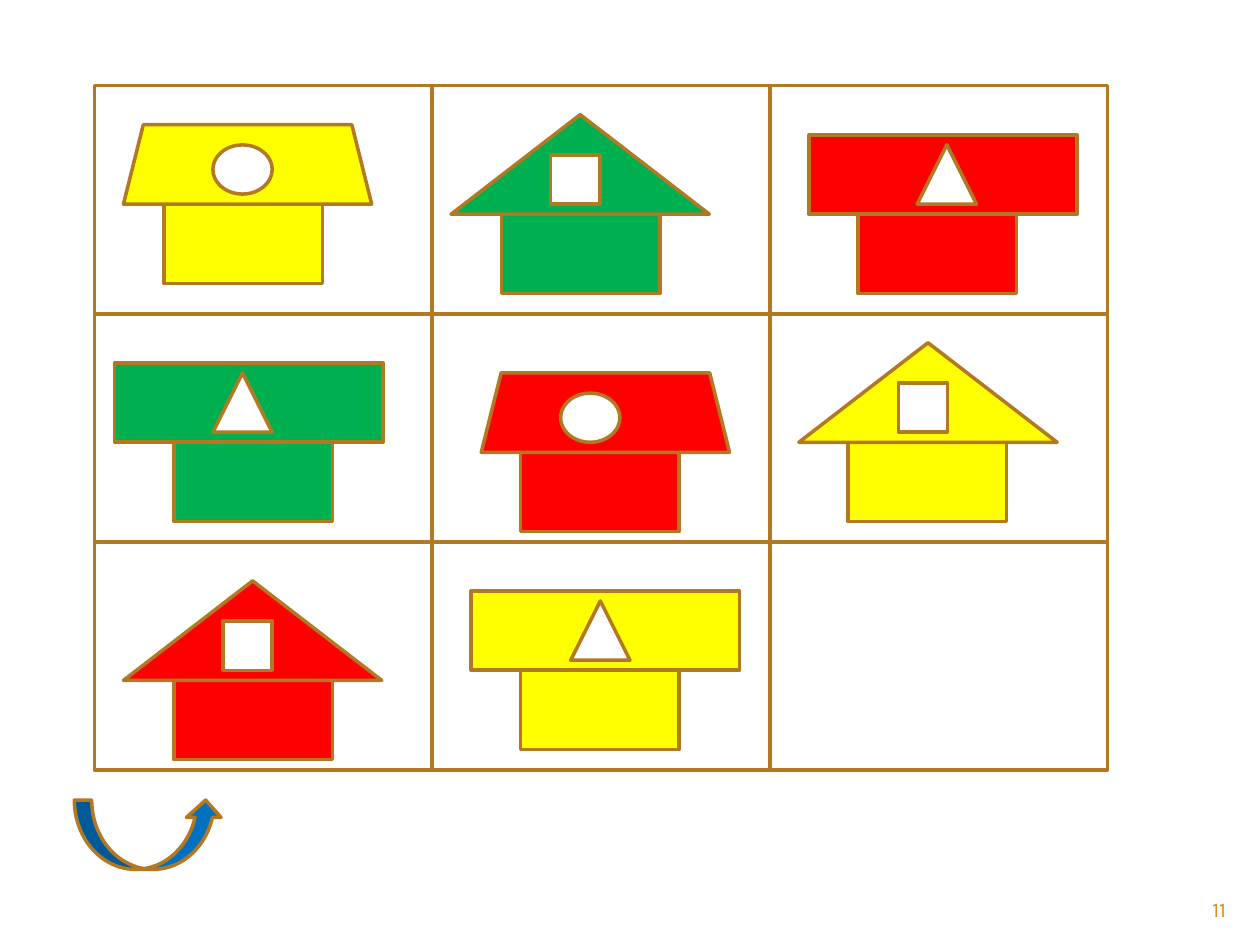
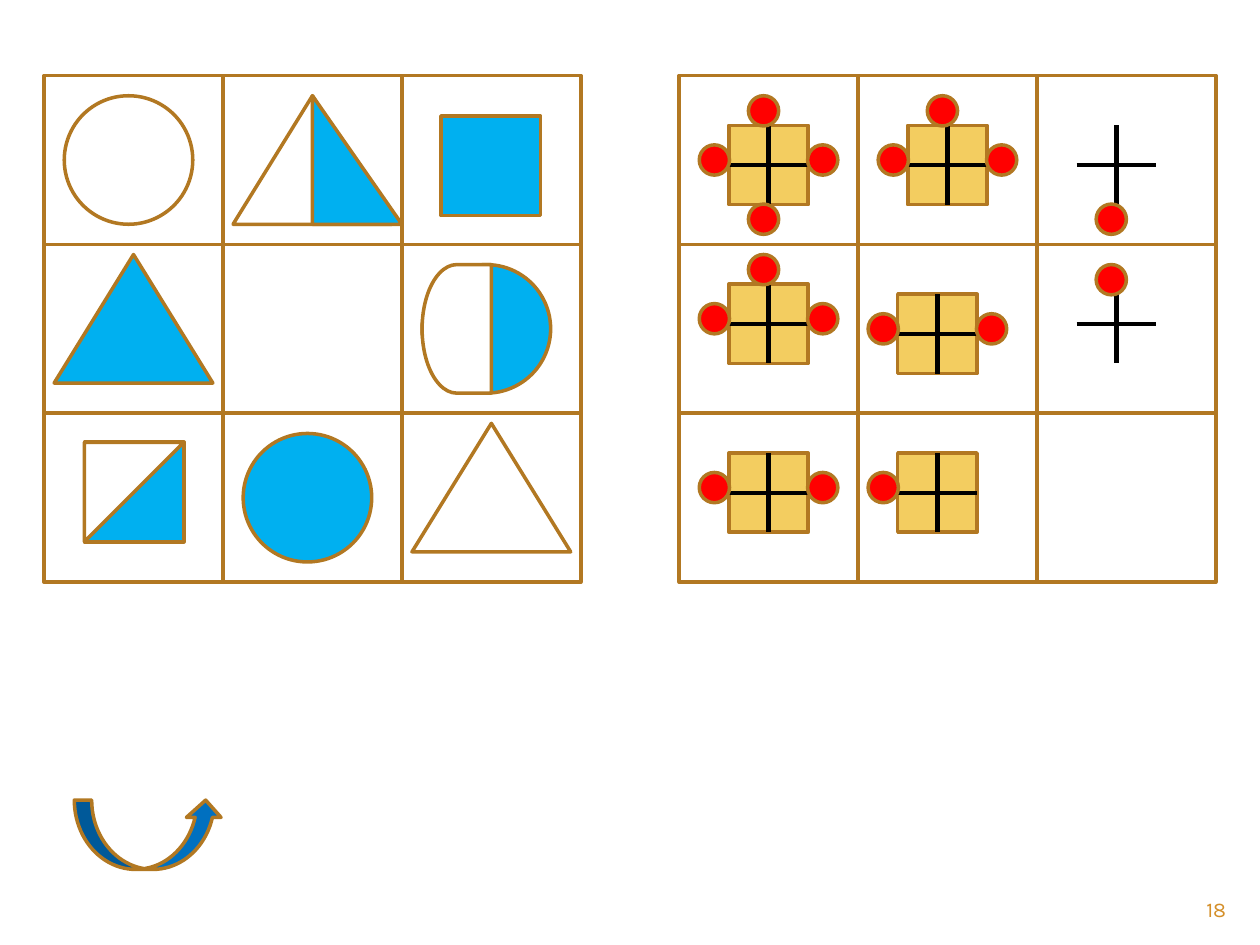
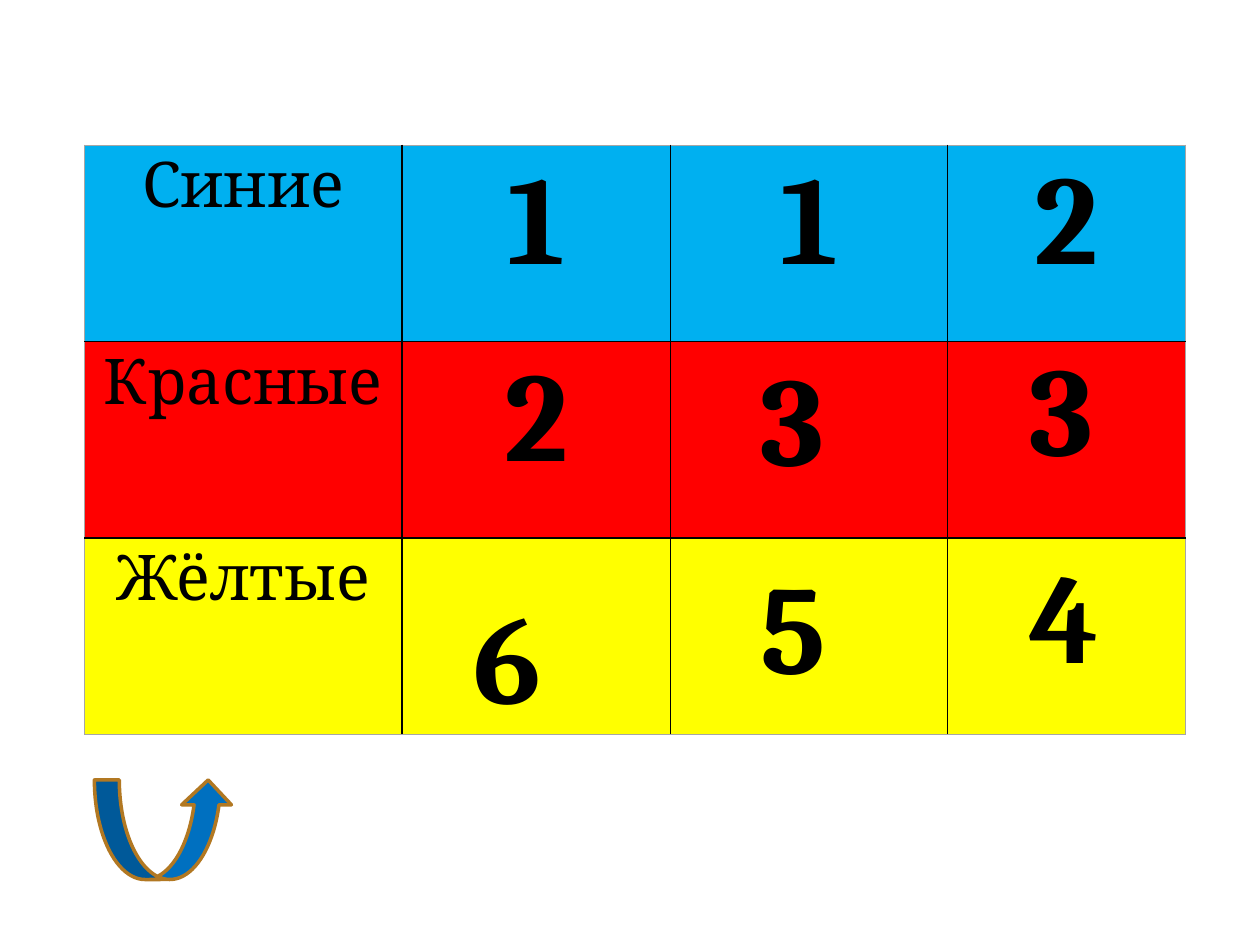
import pptx
import pptx.dml.color
import pptx.enum.shapes
import pptx.enum.text
import pptx.oxml
import pptx.oxml.ns
import pptx.util

Inches = pptx.util.Inches
Pt = pptx.util.Pt
RGBColor = pptx.dml.color.RGBColor
Shape = pptx.enum.shapes.MSO_SHAPE
Align = pptx.enum.text.PP_ALIGN
Anchor = pptx.enum.text.MSO_ANCHOR

# Colours
WHITE = RGBColor(0xFF, 0xFF, 0xFF)
BLACK = RGBColor(0x00, 0x00, 0x00)
BROWN = RGBColor(0xB2, 0x78, 0x22)
ORANGE = RGBColor(0xD4, 0x8F, 0x29)
GREY = RGBColor(0xA6, 0xA6, 0xA6)
BLUE = RGBColor(0x00, 0x70, 0xC0)
SKY = RGBColor(0x00, 0xB0, 0xF0)
YELLOW = RGBColor(0xFF, 0xFF, 0x00)
GREEN = RGBColor(0x00, 0xB0, 0x50)
RED = RGBColor(0xFF, 0x00, 0x00)
SAND = RGBColor(0xF3, 0xCD, 0x60)

# Text formats
NUMBER = {"name": "Karla", "size": Pt(12), "bold": False}
LABEL = {"name": "Cambria", "size": Pt(36), "bold": False}
DIGIT = {"name": "Cambria", "size": Pt(72), "bold": True}


class Painter:
    """Holds the shared style and the current slide."""

    def __init__(self):
        self.deck = pptx.Presentation()
        self.deck.slide_width = Inches(10)
        self.deck.slide_height = Inches(7.5)
        self.page = None

    def start(self, number=None):
        self.page = self.deck.slides.add_slide(self.deck.slide_layouts[6])
        if number:
            box = self.text(number, 9, 7.08, 0.83, 0.27, NUMBER, ORANGE)
            box.text_frame.vertical_anchor = Anchor.MIDDLE
            box.text_frame.paragraphs[0].alignment = Align.RIGHT

    def add_span(self, para, words, form, colour):
        span = para.add_run()
        span.text = words
        for name, value in form.items():
            setattr(span.font, name, value)
        span.font.color.rgb = colour

    def text(self, words, left, top, width, height, form, colour=BLACK):
        box = self.page.shapes.add_textbox(
            Inches(left), Inches(top), Inches(width), Inches(height))
        box.text_frame.word_wrap = True
        self.add_span(box.text_frame.paragraphs[0], words, form, colour)
        return box

    def shape(self, kind, left, top, width, height, fill=WHITE):
        shape = self.page.shapes.add_shape(
            kind, Inches(left), Inches(top), Inches(width), Inches(height))
        shape.shadow.inherit = False
        shape.fill.solid()
        shape.fill.fore_color.rgb = fill
        shape.line.color.rgb = BROWN
        shape.line.width = Pt(2)
        return shape

    def line(self, start, end, width):
        line = self.page.shapes.add_connector(
            pptx.enum.shapes.MSO_CONNECTOR.STRAIGHT,
            *[Inches(value) for value in start + end])
        line.line.color.rgb = BLACK
        line.line.width = Pt(width)
        line._element.spPr.append(pptx.oxml.parse_xml(
            f"<a:effectLst {pptx.oxml.ns.nsdecls('a')}/>"))
        return line

    def arrow(self, left=0.59, top=6.35, width=1.18, height=0.55):
        self.shape(Shape.CURVED_UP_ARROW, left, top, width, height, BLUE)

    def grid(self, left, top, width, height):
        for row in range(3):
            for column in range(3):
                self.shape(Shape.RECTANGLE, left + column * width,
                           top + row * height, width, height)

    def house(self, roof, colour, left, top, roof_left, window_left):
        self.shape(Shape.RECTANGLE, left, top, 1.26, 0.63, colour)
        kind, width, height, window, window_width, window_height, rise = roof
        self.shape(kind, roof_left, top - height, width, height, colour)
        self.shape(window, window_left, top - rise, window_width, window_height)

    def seats(self, x, y, has_table, places):
        half = 0.315
        ends = [((x, y - half), (x, y + half), 3, 0, 2),
                ((x - half, y), (x + half, y), 2.25, 1, 3)]
        if has_table:
            table = self.shape(Shape.RECTANGLE, x - half, y - half,
                               2 * half, 2 * half, SAND)
        for start, end, width, first, last in ends:
            line = self.line(start, end, width)
            if has_table:
                line.begin_connect(table, first)
                line.end_connect(table, last)
        for place in places:
            across, down = SEATS[place]
            self.shape(Shape.OVAL, x + across - 0.12, y + down - 0.12,
                       0.24, 0.24, RED)

    def border(self, cell, side, colour, width):
        cell._tc.get_or_add_tcPr().append(pptx.oxml.parse_xml(
            f"<a:ln{side} {pptx.oxml.ns.nsdecls('a')} w=\"{Pt(width)}\">"
            f"<a:solidFill><a:srgbClr val=\"{colour}\"/></a:solidFill>"
            f"</a:ln{side}>"))

    def table(self, rows, left, top, widths, row_height):
        last_row, last_column = len(rows) - 1, len(widths) - 1
        frame = self.page.shapes.add_table(
            len(rows), len(widths), Inches(left), Inches(top),
            Inches(sum(widths)), Inches(row_height * len(rows)))
        table = frame.table
        table.first_row = table.horz_banding = False
        for column, width in zip(table.columns, widths):
            column.width = Inches(width)
        for r, (colour, words) in enumerate(rows):
            table.rows[r].height = Inches(row_height)
            for c, word in enumerate(words):
                cell = table.cell(r, c)
                edges = {"L": c == 0, "R": c == last_column,
                         "T": r == 0, "B": r == last_row}
                for side, outer in edges.items():
                    self.border(cell, side, *((GREY, 0.5) if outer else (BLACK, 1)))
                cell.fill.solid()
                cell.fill.fore_color.rgb = colour
                para = cell.text_frame.paragraphs[0]
                para.alignment = Align.CENTER
                if word:
                    self.add_span(para, word, DIGIT if c else LABEL, BLACK)


# Roofs: outline, width, height, then window outline, width, height, rise
GABLE = (Shape.ISOSCELES_TRIANGLE, 2.05, 0.79, Shape.RECTANGLE, 0.39, 0.39, 0.47)
FLAT = (Shape.RECTANGLE, 2.13, 0.63, Shape.ISOSCELES_TRIANGLE, 0.47, 0.47, 0.55)
SLOPED = (Shape.TRAPEZOID, 1.97, 0.63, Shape.OVAL, 0.47, 0.39, 0.47)

# Houses: roof, colour, wall left and top, roof left, window left
HOUSES = [
    (SLOPED, YELLOW, 1.3, 1.62, 0.98, 1.69),
    (GABLE, GREEN, 3.98, 1.7, 3.58, 4.37),
    (FLAT, RED, 6.81, 1.7, 6.42, 7.28),
    (FLAT, GREEN, 1.38, 3.51, 0.91, 1.69),
    (SLOPED, RED, 4.13, 3.59, 3.82, 4.45),
    (GABLE, YELLOW, 6.73, 3.51, 6.34, 7.13),
    (GABLE, RED, 1.38, 5.4, 0.98, 1.77),
    (FLAT, YELLOW, 4.13, 5.32, 3.74, 4.53),
]

# Seats around a table, as offsets from its centre
SEATS = {"top": (-0.04, -0.43), "bottom": (-0.04, 0.43), "left": (-0.43, -0.04),
         "right": (0.43, -0.04), "inner top": (-0.04, -0.35)}
TABLES = [
    (6.1, 1.31, True, ["top", "left", "right", "bottom"]),
    (7.52, 1.31, True, ["top", "left", "right"]),
    (8.86, 1.31, False, ["bottom"]),
    (6.1, 2.57, True, ["top", "left", "right"]),
    (7.44, 2.65, True, ["left", "right"]),
    (8.86, 2.57, False, ["inner top"]),
    (6.1, 3.91, True, ["left", "right"]),
    (7.44, 3.91, True, ["left"]),
]

# Figures: outline, left, top, width, height, fill
FIGURES = [
    (Shape.OVAL, 0.51, 0.76, 1.02, 1.02, WHITE),
    (Shape.ISOSCELES_TRIANGLE, 1.85, 0.76, 1.26, 1.02, WHITE),
    (Shape.RIGHT_TRIANGLE, 2.48, 0.76, 0.71, 1.02, SKY),
    (Shape.RECTANGLE, 3.5, 0.92, 0.79, 0.79, SKY),
    (Shape.ISOSCELES_TRIANGLE, 0.43, 2.02, 1.26, 1.02, SKY),
    (Shape.OVAL, 3.35, 2.1, 1.02, 1.02, SKY),
    (Shape.RECTANGLE, 0.67, 3.51, 0.79, 0.79, SKY),
    (Shape.OVAL, 1.93, 3.44, 1.02, 1.02, SKY),
    (Shape.ISOSCELES_TRIANGLE, 3.27, 3.36, 1.26, 1.02, WHITE),
]

COUNTS = [
    (SKY, ["Синие", "1", "1", "2"]),
    (RED, ["Красные", "2", "", ""]),
    (YELLOW, ["Жёлтые", "", "", ""]),
]

# Loose digits: text, left, top, width
DIGITS = [("3", 5.94, 2.65, 0.83), ("3", 8.07, 2.57, 0.83), ("6", 3.66, 4.54, 0.79),
          ("5", 5.94, 4.3, 0.94), ("4", 8.07, 4.22, 0.86)]


def main():
    painter = Painter()

    # Houses
    painter.start("11")
    painter.arrow()
    painter.grid(0.75, 0.68, 2.68, 1.81)
    for house in HOUSES:
        painter.house(*house)

    # Half-filled figures and tables with seats
    painter.start("18")
    painter.arrow()
    for left in (0.35, 5.39):
        painter.grid(left, 0.6, 1.42, 1.34)
    for figure in FIGURES:
        painter.shape(*figure)
    corner = painter.shape(Shape.RIGHT_TRIANGLE, 0.67, 3.51, 0.79, 0.79)
    corner.rotation = 90
    half_round = painter.shape(Shape.FLOWCHART_DELAY, 3.35, 2.1, 0.55, 1.02)
    half_round._element.spPr.xfrm.set("flipH", "1")
    for table in TABLES:
        painter.seats(*table)

    # Coloured number table
    painter.start()
    painter.table(COUNTS, 0.67, 1.15, [2.52, 2.13, 2.2, 1.89], 1.56)
    for digit, left, top, width in DIGITS:
        painter.text(digit, left, top, width, 1.31, DIGIT)
    painter.arrow(0.75, 6.19, 1.1, 0.79)

    painter.deck.save("out.pptx")


if __name__ == "__main__":
    main()
